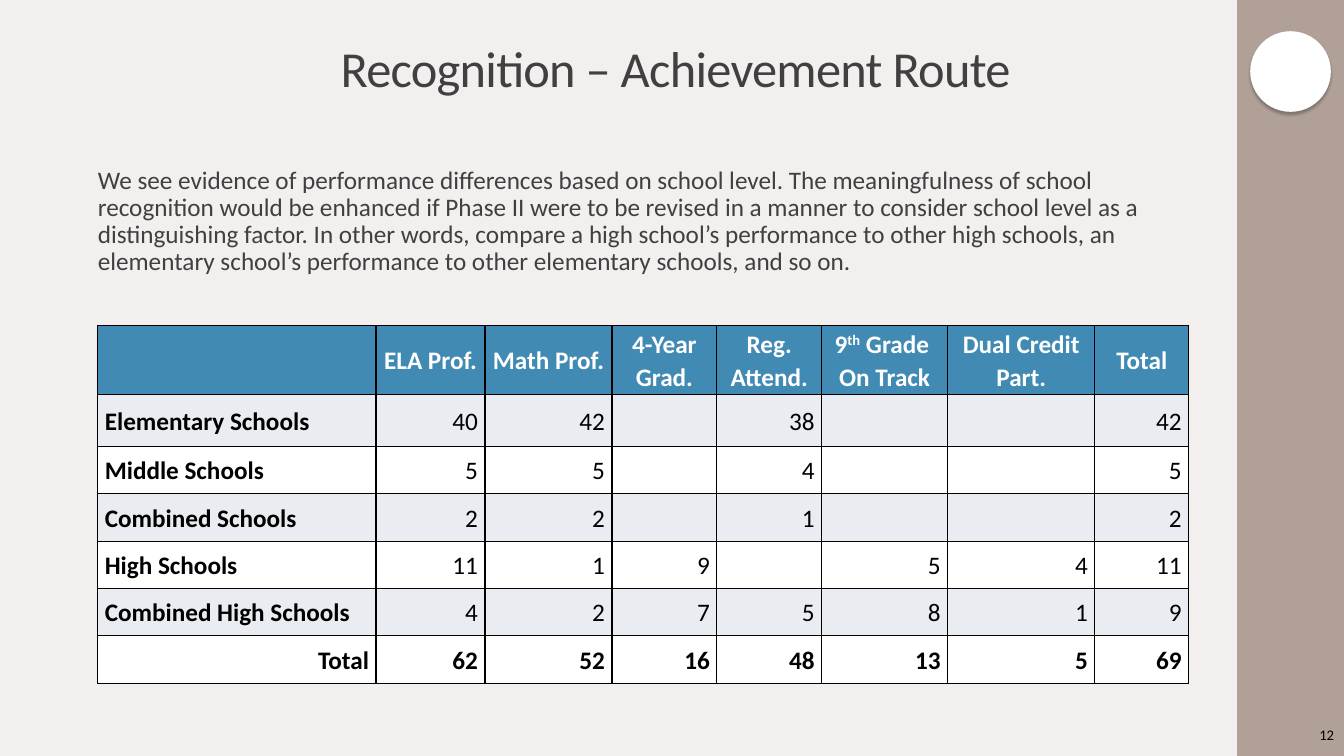
import pptx
import pptx.dml.color
import pptx.enum.shapes
import pptx.enum.text
import pptx.oxml
import pptx.oxml.ns
import pptx.util
from pptx.util import Inches

COLORS = {
    "background": "F2EFEE",
    "sidebar": "B0A097",
    "shadow": "373737",
    "text": "404040",
    "header": "418AB3",
    "band": "E9EDF2",
    "white": "FFFFFF",
    "black": "000000",
}
FONT = "Calibri"
ALIGN = pptx.enum.text.PP_ALIGN
MIDDLE = pptx.enum.text.MSO_ANCHOR.MIDDLE
SHAPES = pptx.enum.shapes.MSO_SHAPE

BODY = (
    "We see evidence of performance differences based on school level. "
    "The meaningfulness of school recognition would be enhanced if Phase II "
    "were to be revised in a manner to consider school level as a "
    "distinguishing factor. In other words, compare a high school’s "
    "performance to other high schools, an elementary school’s performance "
    "to other elementary schools, and so on."
)
COLUMN_WIDTHS = [2.76, 1.08, 1.26, 1.04, 1.04, 1.25, 1.46, 0.93]
ROW_HEIGHTS = [0.68, 0.52] + [0.47] * 5
# Text between carets is superscript.
SCHOOL_ROWS = [
    ["", "ELA Prof.", "Math Prof.", "4-Year Grad.", "Reg. Attend.",
     "9^th^ Grade \nOn Track", "Dual Credit Part.", "Total"],
    ["Elementary Schools", "40", "42", "", "38", "", "", "42"],
    ["Middle Schools", "5", "5", "", "4", "", "", "5"],
    ["Combined Schools", "2", "2", "", "1", "", "", "2"],
    ["High Schools", "11", "1", "9", "", "5", "4", "11"],
    ["Combined High Schools", "4", "2", "7", "5", "8", "1", "9"],
    ["Total", "62", "52", "16", "48", "13", "5", "69"],
]


def rgb(name):
    return pptx.dml.color.RGBColor.from_string(COLORS[name])


def style(para, size, color, align, bold=False, spacing=None):
    para.alignment = align
    para.line_spacing = spacing
    para.font.name = FONT
    para.font.size = pptx.util.Pt(size)
    para.font.bold = bold
    para.font.color.rgb = rgb(color)


def add_plain_shape(page, kind, left, top, width, height, color):
    shape = page.shapes.add_shape(
        kind, Inches(left), Inches(top), Inches(width), Inches(height))
    shape.shadow.inherit = False
    shape.fill.solid()
    shape.fill.fore_color.rgb = rgb(color)
    shape.line.fill.background()
    return shape


def add_sidebar(page, left, top, width, height, number):
    add_plain_shape(page, SHAPES.RECTANGLE, left, top, width, height, "sidebar")
    badge = add_plain_shape(
        page, SHAPES.OVAL, left + 0.13, top + 0.31, 0.8, 0.8, "white")
    effects = badge._element.spPr.find(pptx.oxml.ns.qn("a:effectLst"))
    effects.append(pptx.oxml.parse_xml(
        f'<a:outerShdw {pptx.oxml.ns.nsdecls("a")} blurRad="25400" '
        f'dist="25400" dir="5400000"><a:srgbClr val="{COLORS["shadow"]}">'
        '<a:alpha val="40000"/></a:srgbClr></a:outerShdw>'))
    box = page.shapes.add_textbox(
        Inches(left), Inches(top + 7.09), Inches(width), Inches(0.4))
    frame = box.text_frame
    frame.word_wrap = True
    frame.vertical_anchor = MIDDLE
    frame.text = number
    style(frame.paragraphs[0], 10.5, "black", ALIGN.RIGHT)


def place_title(page, left, top, width, height, text):
    title = page.shapes.title
    title.left, title.top = Inches(left), Inches(top)
    title.width, title.height = Inches(width), Inches(height)
    frame = title.text_frame
    frame.vertical_anchor = MIDDLE
    frame.text = text
    para = frame.paragraphs[0]
    style(para, 36, "text", ALIGN.CENTER, spacing=0.85)
    para.runs[0]._r.get_or_add_rPr().set("spc", "-50")


def add_body(page, left, top, width, height):
    box = page.shapes.add_textbox(
        Inches(left), Inches(top), Inches(width), Inches(height))
    frame = box.text_frame
    frame.word_wrap = True
    frame.margin_left = frame.margin_right = 0
    frame.text = BODY
    style(frame.paragraphs[0], 18, "text", ALIGN.LEFT, spacing=0.9)


def add_borders(cell):
    properties = cell._tc.get_or_add_tcPr()
    for side in ("lnL", "lnR", "lnT", "lnB"):
        properties.append(pptx.oxml.parse_xml(
            f'<a:{side} {pptx.oxml.ns.nsdecls("a")} w="12700"><a:solidFill>'
            f'<a:srgbClr val="{COLORS["black"]}"/></a:solidFill></a:{side}>'))


def write_cell(cell, text, fill, color, align, bold):
    add_borders(cell)
    cell.fill.solid()
    cell.fill.fore_color.rgb = rgb(fill)
    cell.vertical_anchor = MIDDLE
    cell.margin_left = cell.margin_right = Inches(0.07)
    cell.margin_top = cell.margin_bottom = 0
    frame = cell.text_frame
    for index, line in enumerate(text.split("\n")):
        para = frame.add_paragraph() if index else frame.paragraphs[0]
        style(para, 18, color, align, bold, 1.07)
        if not line:
            continue
        for part, words in enumerate(line.split("^")):
            span = para.add_run()
            span.text = words
            if part % 2:
                span._r.get_or_add_rPr().set("baseline", "30000")


def add_school_table(page, left, top):
    table = page.shapes.add_table(
        len(ROW_HEIGHTS), len(COLUMN_WIDTHS), Inches(left), Inches(top),
        Inches(sum(COLUMN_WIDTHS)), Inches(sum(ROW_HEIGHTS))).table
    table.first_row = table.horz_banding = False
    for column, width in zip(table.columns, COLUMN_WIDTHS):
        column.width = Inches(width)
    for row, height in zip(table.rows, ROW_HEIGHTS):
        row.height = Inches(height)
    last = len(SCHOOL_ROWS) - 1
    for r, values in enumerate(SCHOOL_ROWS):
        fill = "header" if r == 0 else "band" if r % 2 else "white"
        color = "black" if r else "white"
        for c, text in enumerate(values):
            if r == 0:
                align = ALIGN.CENTER
            else:
                align = ALIGN.LEFT if c == 0 and r < last else ALIGN.RIGHT
            bold = r in (0, last) or c == 0
            write_cell(table.cell(r, c), text, fill, color, align, bold)


def main():
    deck = pptx.Presentation()
    deck.slide_width, deck.slide_height = Inches(13.33), Inches(7.5)
    page = deck.slides.add_slide(deck.slide_layouts[5])
    page.background.fill.solid()
    page.background.fill.fore_color.rgb = rgb("background")
    add_sidebar(page, 12.27, 0, 1.06, 7.5, "12")
    place_title(page, 1.2, 0.31, 11, 0.82, "Recognition – Achievement Route")
    add_school_table(page, 0.97, 3.23)
    add_body(page, 0.97, 1.61, 10.81, 1.45)
    deck.save("out.pptx")


if __name__ == "__main__":
    main()
